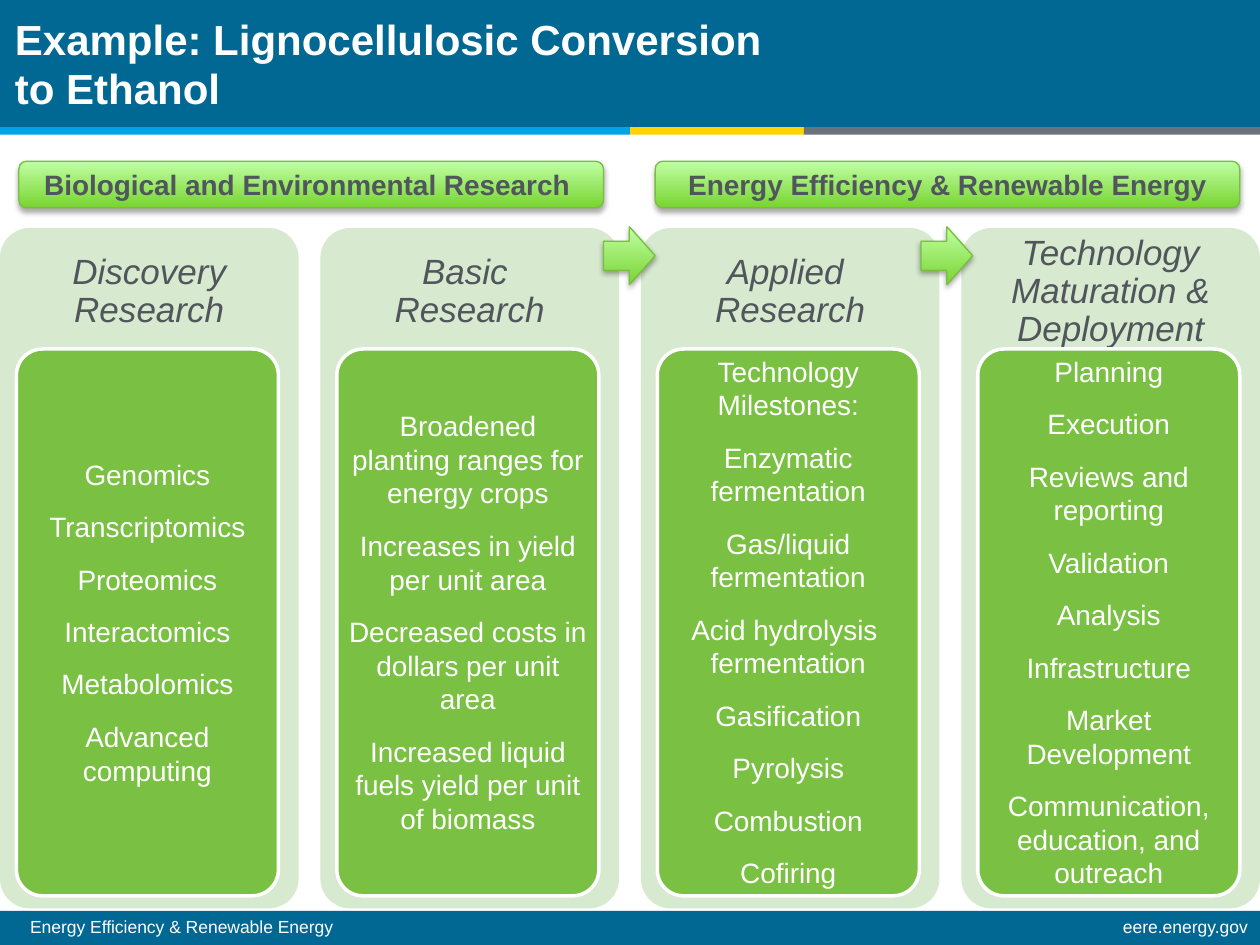
from lxml import etree
from pptx import Presentation, util as u
from pptx.dml.color import RGBColor
from pptx.enum import shapes, text
from pptx.oxml.ns import qn

NAVY = RGBColor(0x00, 0x68, 0x92)
SKY = RGBColor(0x00, 0xA4, 0xE4)
GOLD = RGBColor(0xFF, 0xD2, 0x00)
GRAY = RGBColor(0x6A, 0x73, 0x7B)
INK = RGBColor(0x50, 0x56, 0x5C)
WHITE = RGBColor(0xFF, 0xFF, 0xFF)
PALE = RGBColor(0xD7, 0xE9, 0xCF)
GREEN = RGBColor(0x7A, 0xC1, 0x43)
EDGE = RGBColor(0x77, 0xC0, 0x3E)
LIME = RGBColor(0x78, 0xD4, 0x30)
MINT = RGBColor(0xC0, 0xFF, 0xA4)

# Grid of four equal columns across the full width
WIDE, HIGH = 10, 7.5
PANEL = 2.37
STEP = (WIDE - PANEL) / 3

KIND = shapes.MSO_SHAPE
MID = text.MSO_ANCHOR.MIDDLE
MIDDLE = text.PP_ALIGN.CENTER
RIGHT = text.PP_ALIGN.RIGHT

COLS = [
    ("Discovery Research",
     ["Genomics", "Transcriptomics", "Proteomics", "Interactomics",
      "Metabolomics", "Advanced computing"]),
    ("Basic \vResearch",
     ["Broadened planting ranges for energy crops",
      "Increases in yield per unit area",
      "Decreased costs in dollars per unit area",
      "Increased liquid fuels yield per unit of biomass"]),
    ("Applied \vResearch",
     ["Technology Milestones:", "Enzymatic fermentation",
      "Gas/liquid fermentation", "Acid hydrolysis \vfermentation",
      "Gasification", "Pyrolysis", "Combustion", "Cofiring"]),
    ("Technology Maturation & Deployment",
     ["Planning", "Execution", "Reviews and reporting", "Validation",
      "Analysis", "Infrastructure", "Market Development",
      "Communication, education, and outreach"]),
]


def inch(box):
    return [u.Inches(v) for v in box]


def apply(item, vals):
    for key, val in vals.items():
        setattr(item, key, val)


def write(frame, lines, size, color, look=None, para=None, gap=0, pad=None,
          anchor=text.MSO_ANCHOR.TOP):
    apply(frame, {"word_wrap": True, "vertical_anchor": anchor})
    if pad:
        sides = ("left", "top", "right", "bottom")
        apply(frame, {f"margin_{s}": u.Inches(v) for s, v in zip(sides, pad)})
    for n, line in enumerate(lines):
        p = frame.paragraphs[0] if n == 0 else frame.add_paragraph()
        p.text = line
        apply(p, para or {})
        if n and gap:
            p.space_before = u.Pt(gap)
        apply(p.font, {"name": "Arial", "size": u.Pt(size), **(look or {})})
        p.font.color.rgb = color


def label(slide, box, lines, *args, **opts):
    write(slide.shapes.add_textbox(*inch(box)).text_frame, lines, *args, **opts)


def block(slide, kind, box, fill, edge=None, width=0, round_=None):
    item = slide.shapes.add_shape(kind, *inch(box))
    item.shadow.inherit = False
    if round_:
        item.adjustments[0] = round_
    if fill:
        item.fill.solid()
        item.fill.fore_color.rgb = fill
    if edge is None:
        item.line.fill.background()
    else:
        item.line.color.rgb = edge
        item.line.width = u.Pt(width)
    return item


def glossy(slide, kind, box):
    """Green gradient shape with a soft shadow below it."""
    item = block(slide, kind, box, None, EDGE, 0.75)
    item.fill.gradient()
    item.fill.gradient_angle = 90
    for stop, color in zip(item.fill.gradient_stops, (LIME, MINT)):
        stop.color.rgb = color
    glow = item._element.spPr.find(qn("a:effectLst"))
    cast = etree.SubElement(glow, qn("a:outerShdw"), blurRad=str(u.Pt(3.1)),
                            dist=str(u.Pt(1.8)), dir="5400000", rotWithShape="0")
    tone = etree.SubElement(cast, qn("a:srgbClr"), val="000000")
    etree.SubElement(tone, qn("a:alpha"), val="35000")
    return item


def frame_bars(slide):
    block(slide, KIND.RECTANGLE, (0, 0, WIDE, 1.01), NAVY)
    block(slide, KIND.RECTANGLE, (0, 7.23, WIDE, 0.27), NAVY)
    # Stripe under the title bar
    ends = (0, 5, 6.38, WIDE)
    for left, right, color in zip(ends, ends[1:], (SKY, GOLD, GRAY)):
        block(slide, KIND.RECTANGLE, (left, 1.01, right - left, 0.06), color)
    # Title and footer
    label(slide, (0.02, 0.07, 6.19, 0.87),
          ["Example: Lignocellulosic Conversion to Ethanol"], 24, WHITE,
          {"bold": True}, {"line_spacing": u.Pt(28)}, anchor=MID)
    label(slide, (0.14, 7.24, 5.8, 0.26),
          ["Energy Efficiency & Renewable Energy"], 10, WHITE,
          para={"line_spacing": 0.9})
    label(slide, (5.99, 7.24, 4.01, 0.26), ["eere.energy.gov"], 10, WHITE,
          para={"line_spacing": 0.9, "alignment": RIGHT})


def panel(slide, left, head):
    block(slide, KIND.ROUNDED_RECTANGLE, (left, 1.81, PANEL, 5.4), PALE, round_=0.1)
    label(slide, (left, 1.81, PANEL, 1.62), [head], 20, INK, {"italic": True},
          {"alignment": MIDDLE, "line_spacing": 0.9},
          pad=(0.08, 0.2, 0.08, 0.8), anchor=MID)


def card(slide, left, items):
    block(slide, KIND.ROUNDED_RECTANGLE, (left + 0.13, 2.77, 2.08, 4.34),
          GREEN, WHITE, 2, 0.1)
    label(slide, (left + 0.19, 2.84, 1.96, 4.19), items, 16, WHITE,
          para={"alignment": MIDDLE, "line_spacing": u.Pt(19.2)}, gap=10.8,
          pad=(0.03,) * 4, anchor=MID)


def main():
    deck = Presentation()
    deck.slide_width, deck.slide_height = inch((WIDE, HIGH))
    slide = deck.slides.add_slide(deck.slide_layouts[6])
    frame_bars(slide)

    # Column panels with headings
    for n, (head, _) in enumerate(COLS):
        panel(slide, n * STEP, head)

    # Arrows between stages
    for left in (4.79, 7.31):
        glossy(slide, KIND.RIGHT_ARROW, (left, 1.8, 0.41, 0.46))

    # Owner of each pair of columns
    owners = ("Biological and Environmental Research ",
              "Energy Efficiency & Renewable Energy")
    for left, name in zip((0.15, 5.2), owners):
        tab = glossy(slide, KIND.ROUNDED_RECTANGLE, (left, 1.28, 4.64, 0.37))
        write(tab.text_frame, [name], 16, INK, {"bold": True},
              {"alignment": MIDDLE}, anchor=MID)

    # Topic cards
    for n, (_, items) in enumerate(COLS):
        card(slide, n * STEP, items)

    deck.save("out.pptx")


if __name__ == "__main__":
    main()
